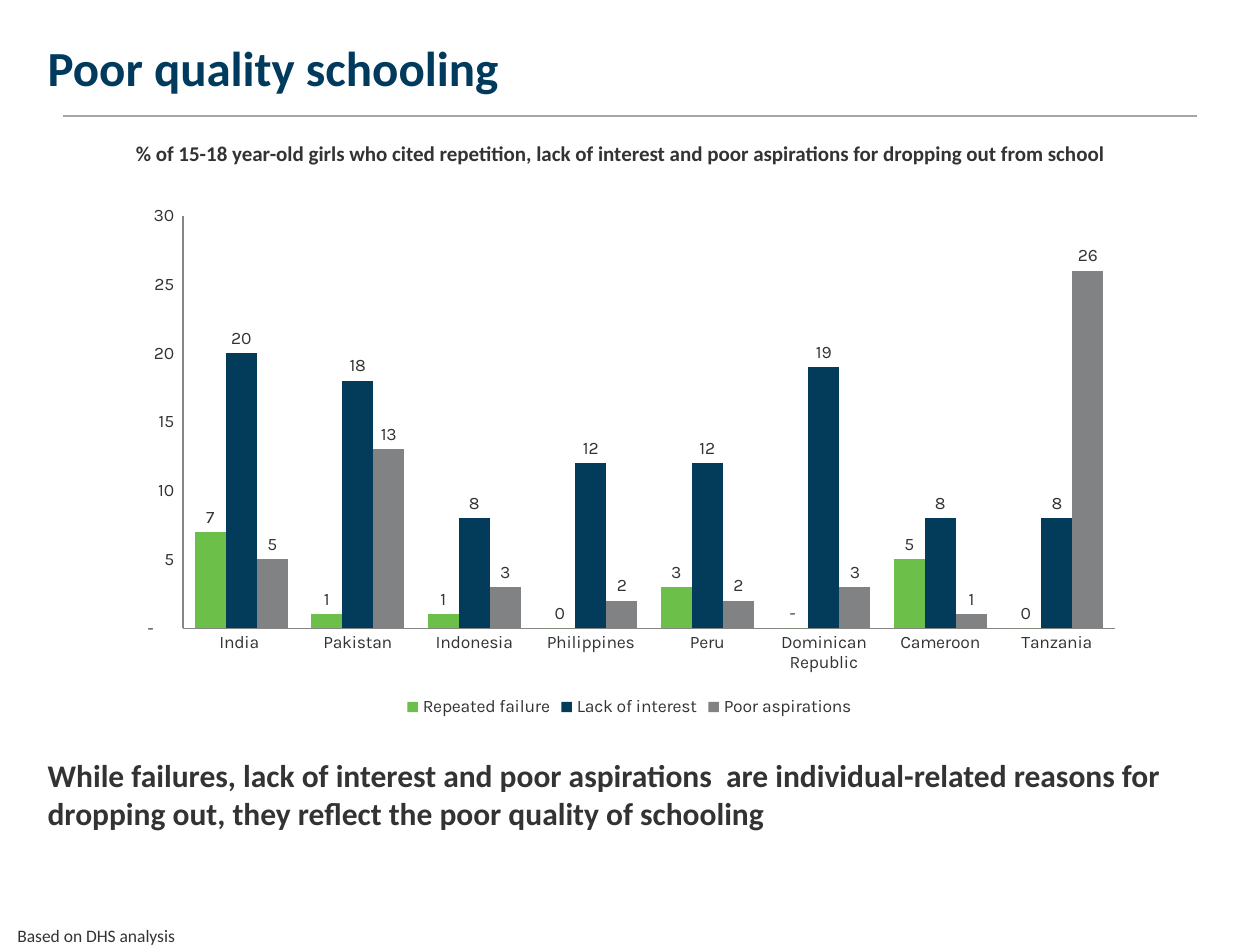
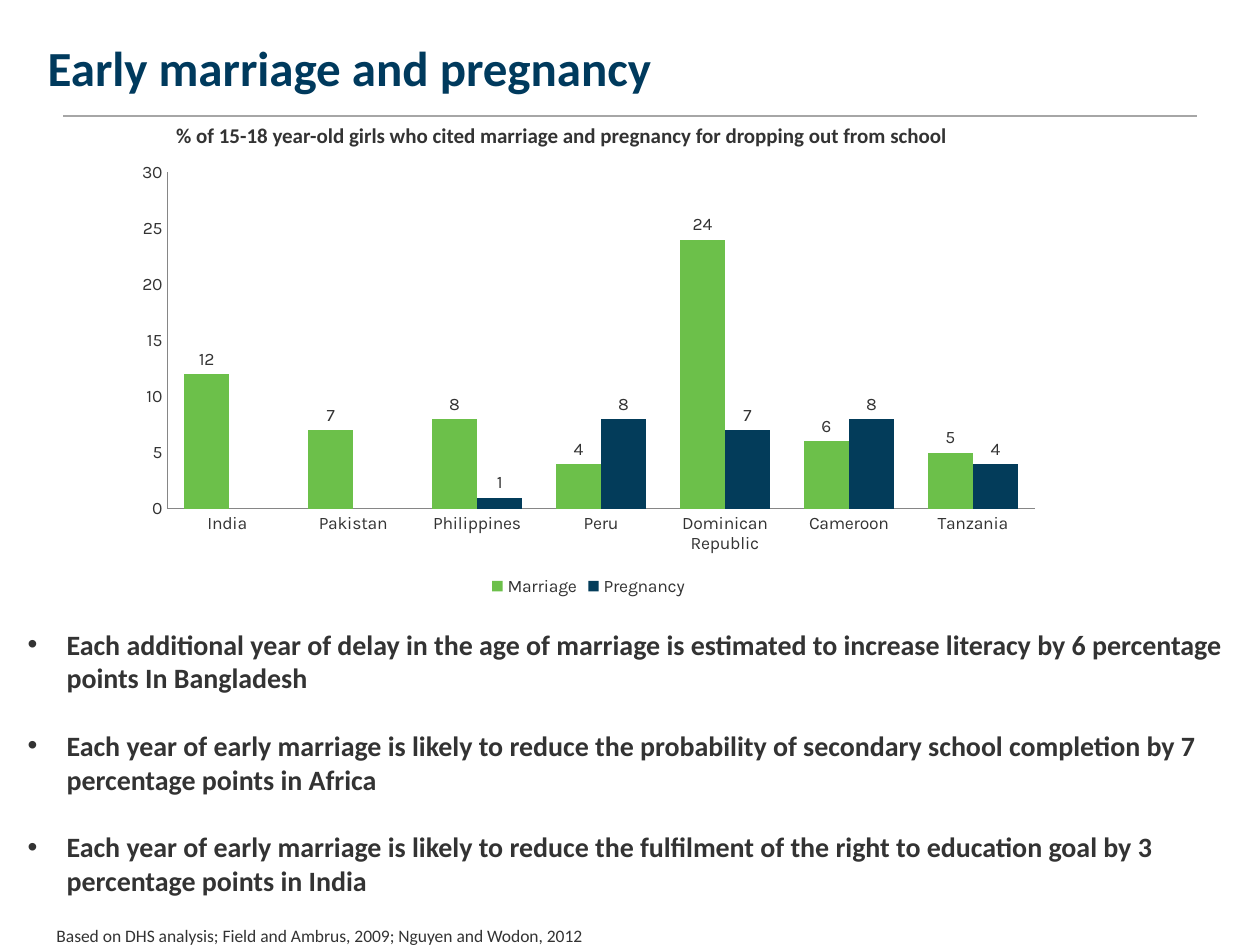
from dataclasses import dataclass, field
from typing import Optional

from lxml.etree import SubElement
from pptx import Presentation
from pptx.chart.data import CategoryChartData
from pptx.dml.color import RGBColor
from pptx.enum.chart import (XL_CHART_TYPE, XL_LABEL_POSITION,
                             XL_LEGEND_POSITION, XL_TICK_MARK)
from pptx.enum.shapes import MSO_CONNECTOR
from pptx.enum.text import MSO_ANCHOR
from pptx.oxml.ns import qn
from pptx.slide import Slide
from pptx.util import Inches, Pt

DASH_ZERO = '_ * #,##0_ ;_ * \\-#,##0_ ;_ * "-"??_ ;_ '


@dataclass(frozen=True)
class Theme:
    body_font: str = "Calibri"
    chart_font: str = "Karla"
    navy: RGBColor = RGBColor.from_string("003A5D")
    ink: RGBColor = RGBColor.from_string("333333")
    rule: RGBColor = RGBColor.from_string("A6A6A6")
    axis: RGBColor = RGBColor.from_string("868686")
    bars: tuple[RGBColor, ...] = tuple(
        RGBColor.from_string(code) for code in ("6CC04A", "033C5A", "818284"))
    title: float = 28
    claim: float = 18
    bullet: float = 16
    heading: float = 12
    small: float = 10


THEME = Theme()


@dataclass(frozen=True)
class Box:
    left: float
    top: float
    width: float
    height: float

    def inches(self) -> tuple[int, ...]:
        return tuple(Inches(n) for n in
                     (self.left, self.top, self.width, self.height))


@dataclass(frozen=True)
class Label:
    box: Box
    lines: tuple[str, ...]
    size: float
    bold: bool = True
    color: RGBColor = THEME.ink
    anchor: MSO_ANCHOR = MSO_ANCHOR.TOP
    bullets: bool = False


@dataclass(frozen=True)
class Bars:
    box: Box
    lands: tuple[str, ...]
    series: dict[str, tuple[Optional[int], ...]]
    axis_format: str = "0"
    dashes: tuple[tuple[int, int], ...] = ()  # (series, point) pairs marked "-"


@dataclass(frozen=True)
class Page:
    title: str
    bars: Bars
    labels: tuple[Label, ...] = field(default_factory=tuple)


def add_label(slide: Slide, label: Label) -> None:
    frame = slide.shapes.add_textbox(*label.box.inches()).text_frame
    frame.word_wrap = True
    frame.vertical_anchor = label.anchor
    frame.text = "\n".join(label.lines)
    for index, para in enumerate(frame.paragraphs):
        if label.bullets:
            props = para._p.get_or_add_pPr()
            props.set("marL", str(Inches(0.31)))
            props.set("indent", str(-Inches(0.31)))
            if index:
                para.space_before = Pt(19.5)
            SubElement(props, qn("a:buFont")).set("typeface", "Arial")
            SubElement(props, qn("a:buChar")).set("char", "•")
        for run in para.runs:
            run.font.name = THEME.body_font
            run.font.size = Pt(label.size)
            run.font.bold = label.bold
            run.font.color.rgb = label.color


def add_rule(slide: Slide) -> None:
    rule = slide.shapes.add_connector(
        MSO_CONNECTOR.STRAIGHT, Inches(0.5), Inches(0.92),
        Inches(9.5), Inches(0.92))
    rule.line.color.rgb = THEME.rule
    rule.line.width = Pt(1)
    SubElement(rule._element.spPr, qn("a:effectLst"))


def style_font(font) -> None:
    font.name = THEME.chart_font
    font.size = Pt(THEME.small)
    font.bold = False
    font.color.rgb = THEME.ink


def add_bars(slide: Slide, bars: Bars) -> None:
    data = CategoryChartData()
    data.categories = bars.lands
    for name, values in bars.series.items():
        data.add_series(name, values)
    chart = slide.shapes.add_chart(
        XL_CHART_TYPE.COLUMN_CLUSTERED, *bars.box.inches(), data).chart
    style_font(chart.font)
    chart.has_title = False
    chart.has_legend = True
    chart.legend.position = XL_LEGEND_POSITION.BOTTOM
    chart.legend.include_in_layout = False

    scale = chart.value_axis
    scale.minimum_scale, scale.maximum_scale, scale.major_unit = 0, 30, 5
    scale.tick_labels.number_format = bars.axis_format
    scale.tick_labels.number_format_is_linked = False
    for axis in (chart.category_axis, scale):
        axis.has_major_gridlines = False
        axis.major_tick_mark = axis.minor_tick_mark = XL_TICK_MARK.NONE
        axis.format.line.color.rgb = THEME.axis

    plot = chart.plots[0]
    plot.vary_by_categories = False
    plot.gap_width = 75
    plot.overlap = 0
    for series, color in zip(plot.series, THEME.bars):
        series.smooth = False
        series.invert_if_negative = False
        series.format.fill.solid()
        series.format.fill.fore_color.rgb = color
        marks = series.data_labels
        marks.show_value = True
        marks.position = XL_LABEL_POSITION.OUTSIDE_END
        marks.number_format = "0"
        marks.number_format_is_linked = False
        style_font(marks.font)
    for which, point in bars.dashes:
        mark = plot.series[which].points[point].data_label
        mark.text_frame.text = "-"
        style_font(mark.text_frame.paragraphs[0].runs[0].font)
        mark.position = XL_LABEL_POSITION.OUTSIDE_END


def add_page(deck: Presentation, page: Page) -> None:
    slide = deck.slides.add_slide(deck.slide_layouts[6])
    add_rule(slide)
    add_label(slide, Label(Box(0.28, 0.21, 9.22, 0.64), (page.title,),
                           THEME.title, color=THEME.navy,
                           anchor=MSO_ANCHOR.MIDDLE))
    add_bars(slide, page.bars)
    for label in page.labels:
        add_label(slide, label)


def source_note(left: float, width: float, text: str) -> Label:
    return Label(Box(left, 7.29, width, 0.27), (text,), THEME.small, bold=False)


PAGES = (
    Page(
        "Poor quality schooling",
        Bars(
            Box(0.98, 1.55, 8.03, 4.18),
            ("India ", "Pakistan", "Indonesia", "Philippines", "Peru",
             "Dominican Republic", "Cameroon", "Tanzania"),
            {"Repeated failure": (7, 1, 1, 0, 3, 0, 5, 0),
             "Lack of interest": (20, 18, 8, 12, 12, 19, 8, 8),
             "Poor aspirations": (5, 13, 3, 2, 2, 3, 1, 26)},
            axis_format=DASH_ZERO,
            dashes=((0, 5),),
        ),
        (
            Label(Box(0.98, 1.07, 8.27, 0.3),
                  ("% of 15-18 year-old girls who cited repetition, lack of "
                   "interest and poor aspirations for dropping out from school",),
                  THEME.heading),
            Label(Box(0.28, 5.95, 9.53, 0.71),
                  ("While failures, lack of interest and poor aspirations  are "
                   "individual-related reasons for dropping out, they reflect "
                   "the poor quality of schooling",),
                  THEME.claim),
            source_note(0.04, 3.94, "Based on DHS analysis"),
        ),
    ),
    Page(
        "Early marriage and pregnancy",
        Bars(
            Box(0.98, 1.22, 7.38, 3.55),
            ("India ", "Pakistan", "Philippines", "Peru",
             "Dominican Republic", "Cameroon", "Tanzania"),
            {"Marriage": (12, 7, 8, 4, 24, 6, 5),
             "Pregnancy": (None, None, 1, 8, 7, 8, 4)},
        ),
        (
            Label(Box(1.3, 0.92, 7.32, 0.3),
                  ("% of 15-18 year-old girls who cited marriage and pregnancy "
                   "for dropping out from school",),
                  THEME.heading),
            Label(Box(0.12, 4.93, 9.88, 2.26),
                  ("Each additional year of delay in the age of marriage is "
                   "estimated to increase literacy by 6 percentage points In "
                   "Bangladesh",
                   "Each year of early marriage is likely to reduce the "
                   "probability of secondary school completion by 7 percentage "
                   "points in Africa",
                   "Each year of early marriage is likely to reduce the "
                   "fulfilment of the right to education goal by 3 percentage "
                   "points in India"),
                  THEME.bullet, bullets=True),
            source_note(0.35, 5.43, "Based on DHS analysis; Field and Ambrus, "
                                    "2009; Nguyen and Wodon, 2012"),
        ),
    ),
)


def main() -> None:
    deck = Presentation()
    deck.slide_width, deck.slide_height = Inches(10), Inches(7.5)
    for page in PAGES:
        add_page(deck, page)
    deck.save("out.pptx")


if __name__ == "__main__":
    main()
